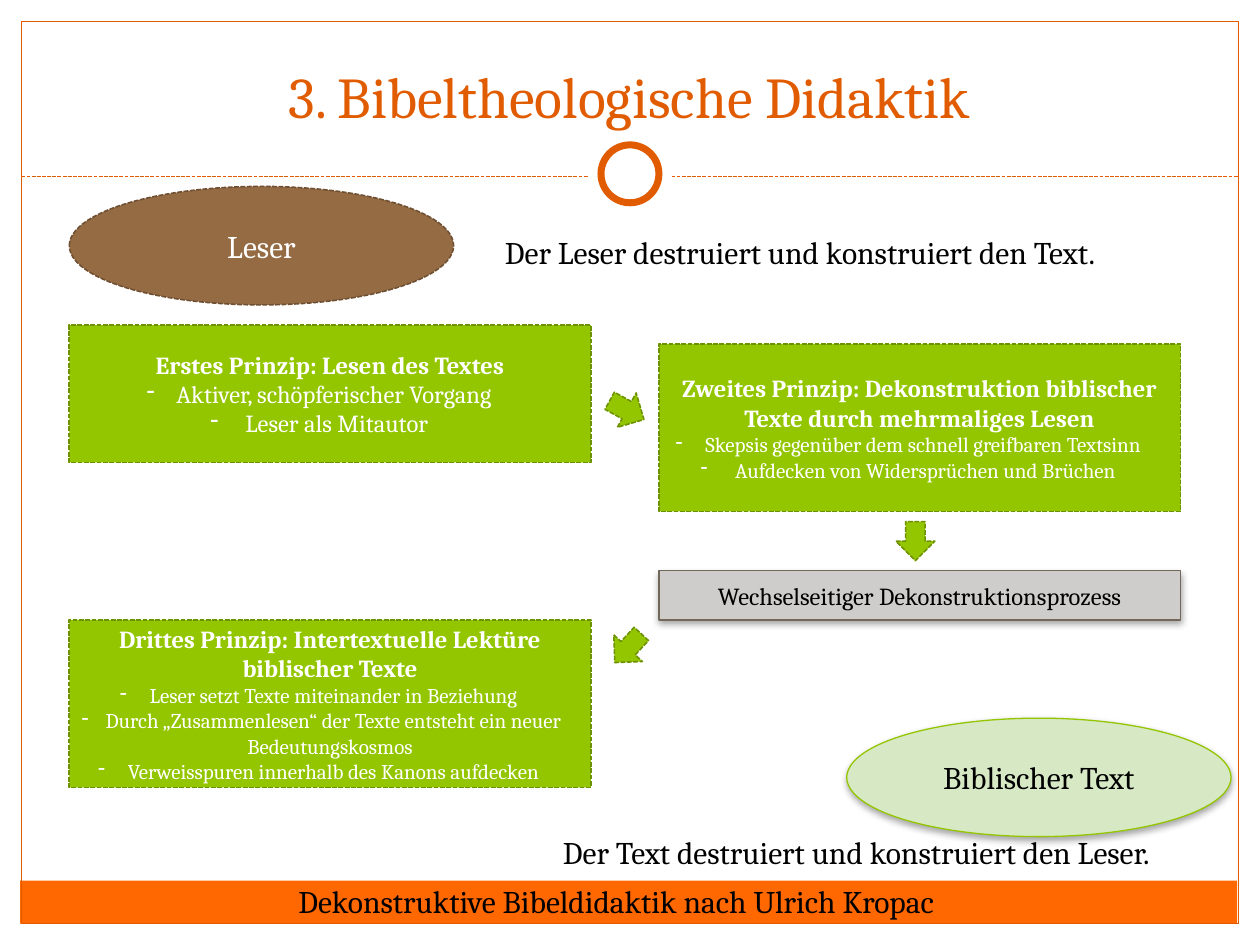
import lxml.etree
import pptx
import pptx.dml.color
import pptx.enum.dml
import pptx.enum.shapes
import pptx.enum.text
import pptx.oxml.ns
import pptx.util

presentation = pptx.Presentation()
presentation.slide_width = pptx.util.Inches(10)
presentation.slide_height = pptx.util.Inches(7.5)
column = presentation.slide_width / 100
row = presentation.slide_height / 75
slide = presentation.slides.add_slide(presentation.slide_layouts[5])

kinds = pptx.enum.shapes.MSO_SHAPE
anchors = pptx.enum.text.MSO_ANCHOR
alignments = pptx.enum.text.PP_ALIGN
dash = pptx.enum.dml.MSO_LINE.SQUARE_DOT
qualify = pptx.oxml.ns.qn

theme = {
    "font": "Cambria",
    "title": 33, "label": 18, "heading": 14, "detail": 12,
    "white": "FFFFFF", "black": "000000", "accent": "E15B00", "footer": "FF6700",
    "principle": {"fill": "94C600", "line": "6D9200", "width": 0.9, "dash": dash},
    "reader": {"fill": "956B43", "line": "6E4F32", "width": 0.9, "dash": dash},
    "process": {"fill": "CFCDCB", "line": "71685A", "width": 0.75, "shadow": True},
    "scripture": {"fill": "D7E8C5", "line": "94C600", "width": 0.75, "shadow": True},
    "band": {"fill": "FF6700"},
    "frame": {"line": "E15B00", "width": 0.75},
    "gap": {"fill": "FFFFFF"},
    "ring": {"fill": "FFFFFF", "line": "E15B00", "width": 4},
}


def draw(kind, box, look, rotation=0):
    left, top, width, height = box
    shape = slide.shapes.add_shape(kind, int(left * column), int(top * row),
                                   int(width * column), int(height * row))
    shape.rotation = rotation
    shape.shadow.inherit = False
    if "fill" in look:
        shape.fill.solid()
        shape.fill.fore_color.rgb = pptx.dml.color.RGBColor.from_string(look["fill"])
    else:
        shape.fill.background()
    if "line" in look:
        shape.line.color.rgb = pptx.dml.color.RGBColor.from_string(look["line"])
        shape.line.width = pptx.util.Pt(look["width"])
        if "dash" in look:
            shape.line.dash_style = look["dash"]
    else:
        shape.line.fill.background()
    if "shadow" in look:
        effects = shape._element.spPr.find(qualify("a:effectLst"))
        shadow = lxml.etree.SubElement(effects, qualify("a:outerShdw"), blurRad="50800",
                                       dist="25400", dir="5400000", rotWithShape="0")
        color = lxml.etree.SubElement(shadow, qualify("a:srgbClr"), val=theme["black"])
        lxml.etree.SubElement(color, qualify("a:alpha"), val="35000")
    return shape


def write(shape, lines, color, alignment=alignments.CENTER, **frame_format):
    frame = shape.text_frame
    for name, value in frame_format.items():
        setattr(frame, name, value)
    for index, (text, size, bold, bullet) in enumerate(lines):
        paragraph = frame.add_paragraph() if index else frame.paragraphs[0]
        paragraph.alignment = alignment
        run = paragraph.add_run()
        run.text = text
        font_format = {"name": theme["font"], "size": pptx.util.Pt(theme[size]), "bold": bold}
        for name, value in font_format.items():
            setattr(run.font, name, value)
        run.font.color.rgb = pptx.dml.color.RGBColor.from_string(color)
        if bullet:
            properties = paragraph._p.get_or_add_pPr()
            lxml.etree.SubElement(properties, qualify("a:buFontTx"))
            lxml.etree.SubElement(properties, qualify("a:buChar"), char="-")


title = slide.shapes.title
title_format = {"left": int(3.3 * column), "top": int(2.5 * row),
                "width": int(93.3 * column), "height": int(8.3 * row)}
for name, value in title_format.items():
    setattr(title, name, value)
write(title, [("3. Bibeltheologische Didaktik", "title", False, False)], theme["accent"],
      vertical_anchor=anchors.BOTTOM, auto_size=pptx.enum.text.MSO_AUTO_SIZE.NONE)

draw(kinds.RECTANGLE, (1.6, 69.9, 96.6, 3.4), theme["band"])
draw(kinds.RECTANGLE, (1.7, 1.7, 96.6, 71.6), theme["frame"])
divider = slide.shapes.add_connector(pptx.enum.shapes.MSO_CONNECTOR.STRAIGHT,
                                     int(1.7 * column), int(14 * row),
                                     int(98.3 * column), int(14 * row))
divider.line.color.rgb = pptx.dml.color.RGBColor.from_string(theme["accent"])
divider.line.width = pptx.util.Pt(0.75)
divider.line.dash_style = dash
lxml.etree.SubElement(divider._element.spPr, qualify("a:effectLst"))
for diameter, look in ((6.7, "gap"), (4.6, "ring")):
    draw(kinds.OVAL, (50 - diameter / 2, 13.8 - diameter / 2, diameter, diameter), theme[look])

left_column, right_column, box_width = 5.5, 52.3, 41.4
principles = [
    (left_column, 25.8, 10.9, "Erstes Prinzip: Lesen des Textes", "heading",
     ["Aktiver, schöpferischer Vorgang", " Leser als Mitautor"]),
    (right_column, 27.3, 13.3,
     "Zweites Prinzip: Dekonstruktion biblischer Texte durch mehrmaliges Lesen", "detail",
     ["Skepsis gegenüber dem schnell greifbaren Textsinn",
      " Aufdecken von Widersprüchen und Brüchen"]),
    (left_column, 49.2, 13.3, "Drittes Prinzip: Intertextuelle Lektüre biblischer Texte", "detail",
     ["Leser setzt Texte miteinander in Beziehung",
      "Durch „Zusammenlesen“ der Texte entsteht ein neuer Bedeutungskosmos",
      "Verweisspuren innerhalb des Kanons aufdecken"]),
]
for left, top, height, heading, size, details in principles:
    shape = draw(kinds.RECTANGLE, (left, top, box_width, height), theme["principle"])
    lines = [(heading, "heading", True, False)]
    lines += [(detail, size, False, True) for detail in details]
    write(shape, lines, theme["white"], vertical_anchor=anchors.MIDDLE)

labels = [
    (kinds.RECTANGLE, (right_column, 45.3, box_width, 3.9), "process",
     "Wechselseitiger Dekonstruktionsprozess", "heading", "black"),
    (kinds.OVAL, (left_column, 14.8, 30.5, 9.4), "reader", "Leser", "label", "white"),
    (kinds.OVAL, (67.2, 57, 30.5, 9.4), "scripture", "Biblischer Text", "label", "black"),
]
for kind, box, look, text, size, color in labels:
    shape = draw(kind, box, theme[look])
    write(shape, [(text, size, False, False)], theme[color], vertical_anchor=anchors.MIDDLE)

for left, top, rotation in ((48.2, 31, 298.7), (71.1, 41.4, 0), (48.3, 49.9, 42.9)):
    draw(kinds.DOWN_ARROW, (left, top, 3.1, 3.1), theme["principle"], rotation)

captions = [
    (22.7, 69.5, 57.7, "Dekonstruktive Bibeldidaktik nach Ulrich Kropac"),
    (39.1, 18, 53.7, "Der Leser destruiert und konstruiert den Text."),
    (43.7, 65.6, 53.7, "Der Text destruiert und konstruiert den Leser."),
]
for left, top, width, text in captions:
    caption = slide.shapes.add_textbox(int(left * column), int(top * row),
                                       int(width * column), int(4 * row))
    write(caption, [(text, "label", False, False)], theme["black"], alignments.LEFT,
          word_wrap=False, auto_size=pptx.enum.text.MSO_AUTO_SIZE.SHAPE_TO_FIT_TEXT)

presentation.save("out.pptx")
